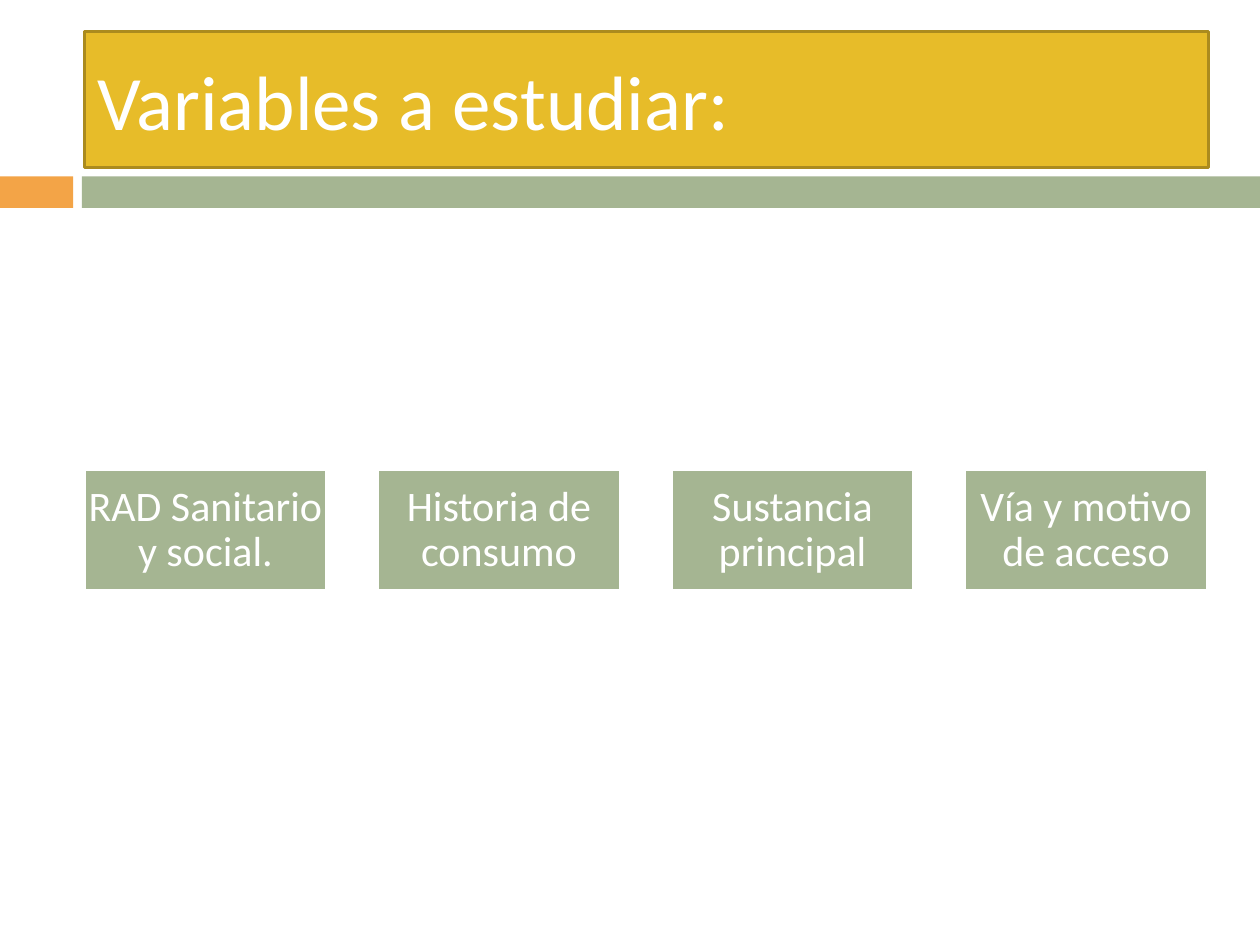
from pptx import Presentation
from pptx.dml.color import RGBColor
from pptx.enum.shapes import MSO_SHAPE
from pptx.enum.text import MSO_ANCHOR, MSO_AUTO_SIZE, PP_ALIGN
from pptx.util import Inches, Pt

TITLE = "Variables a estudiar:"
TOPICS = [
    "RAD Sanitario y social.",
    "Historia de consumo",
    "Sustancia principal",
    "Vía y motivo de acceso",
]
WHITE = RGBColor(0xFF, 0xFF, 0xFF)
GOLD = RGBColor(0xE7, 0xBC, 0x29)
BRONZE = RGBColor(0xAB, 0x8B, 0x1E)
ORANGE = RGBColor(0xF3, 0xA4, 0x47)
GREEN = RGBColor(0xA5, 0xB5, 0x92)
BANDS = [(0, 0.58, ORANGE), (0.65, 9.35, GREEN)]
LEFT, TOP, WIDE, HIGH, STEP = 0.67, 3.73, 1.92, 0.96, 2.33


def paint(shape, fill, line=None):
    shape.fill.solid()
    shape.fill.fore_color.rgb = fill
    if line is None:
        shape.line.fill.background()
    else:
        shape.line.color.rgb = line
        shape.line.width = Pt(1.5)


def add_box(slide, left, top, wide, high, fill, line=None):
    box = slide.shapes.add_shape(
        MSO_SHAPE.RECTANGLE, Inches(left), Inches(top), Inches(wide), Inches(high)
    )
    box.shadow.inherit = False
    paint(box, fill, line)
    return box


def write(shape, text, size, align):
    frame = shape.text_frame
    frame.text = text
    frame.word_wrap = True
    frame.auto_size = MSO_AUTO_SIZE.NONE
    frame.vertical_anchor = MSO_ANCHOR.MIDDLE
    para = frame.paragraphs[0]
    para.alignment = align
    para.font.name = "Calibri"
    para.font.size = Pt(size)
    para.font.color.rgb = WHITE
    return frame


def main():
    deck = Presentation()
    deck.slide_width, deck.slide_height = Inches(10), Inches(7.5)
    slide = deck.slides.add_slide(deck.slide_layouts[5])

    for left, wide, fill in BANDS:
        add_box(slide, left, 1.4, wide, 0.25, fill)

    title = slide.shapes.title
    title.left, title.top = Inches(LEFT), Inches(0.25)
    title.width, title.height = Inches(8.92), Inches(1.08)
    paint(title, GOLD, BRONZE)
    write(title, TITLE, 44, PP_ALIGN.LEFT)

    for i, topic in enumerate(TOPICS):
        box = add_box(slide, LEFT + i * STEP, TOP, WIDE, HIGH, GREEN, WHITE)
        frame = write(box, topic, 24, PP_ALIGN.CENTER)
        frame.margin_left = frame.margin_right = Inches(0.02)
        frame.margin_top = frame.margin_bottom = Inches(0.02)
        frame.paragraphs[0].line_spacing = 0.9

    deck.save("out.pptx")


if __name__ == "__main__":
    main()
